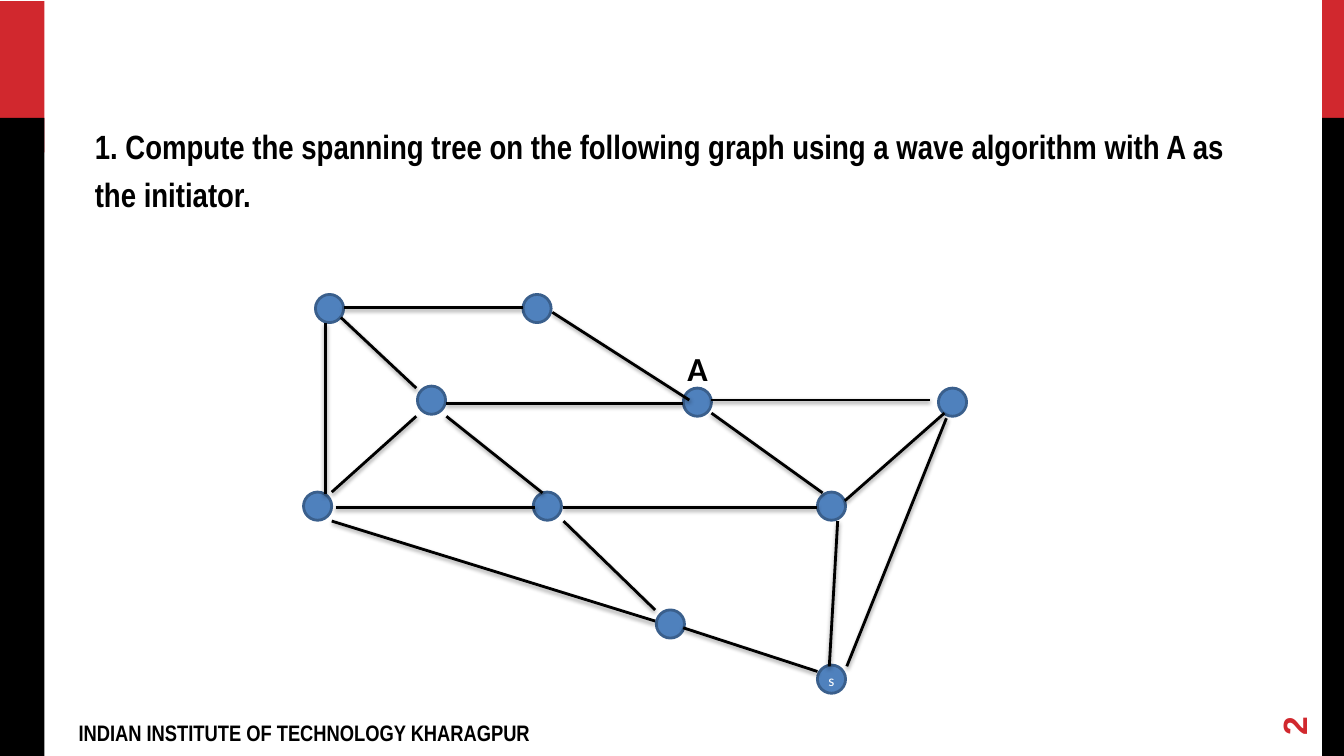
from dataclasses import dataclass

from lxml import etree
from pptx import Presentation
from pptx import util as u
from pptx.dml.color import RGBColor
from pptx.enum import shapes, text
from pptx.oxml import ns

BLACK, RED, WHITE = "000000", "D1282E", "FFFFFF"
NODE_FILL, NODE_LINE = "4F81BD", "3A5F8C"
NODE_SIZE = 0.71


@dataclass(frozen=True)
class Area:
    left: float
    top: float
    width: float
    height: float

    def lengths(self) -> tuple:
        return tuple(u.Cm(n) for n in (self.left, self.top, self.width, self.height))


@dataclass(frozen=True)
class Band:
    area: Area
    color: str


@dataclass(frozen=True)
class Node:
    left: float
    top: float
    label: str = ""


@dataclass(frozen=True)
class Edge:
    x1: float
    y1: float
    x2: float
    y2: float


@dataclass(frozen=True)
class Style:
    font: str
    size: float
    color: str
    bold: bool = True


BANDS = [
    Band(Area(33.32, 0, 0.55, 3.81), RED),
    Band(Area(33.32, 2.97, 0.55, 16.08), BLACK),
    Band(Area(0, 0.03, 1.12, 3.81), RED),
    Band(Area(0, 2.97, 1.12, 16.08), BLACK),
]

NODES = [
    Node(7.95, 7.42), Node(13.18, 7.42),
    Node(10.52, 9.73), Node(17.22, 9.78), Node(23.65, 9.78),
    Node(7.65, 12.4), Node(13.44, 12.4), Node(20.6, 12.4),
    Node(16.54, 15.37), Node(20.6, 16.76, "s"),
]

EDGES = [
    Edge(8.66, 7.75, 13.18, 7.75),
    Edge(17.93, 10.08, 23.44, 10.08),
    Edge(8.36, 12.4, 10.49, 10.49),
    Edge(17.22, 15.82, 20.6, 16.92),
    Edge(8.59, 8, 10.49, 9.78),
    Edge(14.2, 13.13, 16.51, 15.37),
    Edge(8.46, 12.78, 13.49, 12.78),
    Edge(14.2, 12.78, 20.6, 12.78),
    Edge(17.93, 10.41, 20.73, 12.42),
    Edge(11.25, 10.49, 13.67, 12.42),
    Edge(11.25, 10.16, 17.22, 10.16),
    Edge(13.92, 7.87, 17.37, 10.08),
    Edge(23.85, 10.54, 21.34, 16.79),
    Edge(21.11, 13.13, 20.9, 16.79),
    Edge(23.8, 10.41, 21.29, 12.62),
    Edge(16.51, 15.65, 8.36, 13.13),
    Edge(8.2, 12.45, 8.2, 8.13),
]


def rgb(color: str) -> RGBColor:
    return RGBColor.from_string(color)


def write(shape, words: str, style: Style):
    frame = shape.text_frame
    frame.margin_left = frame.margin_right = u.Cm(0.28)
    frame.margin_top = frame.margin_bottom = u.Cm(0.15)
    frame.auto_size = text.MSO_AUTO_SIZE.NONE
    frame.word_wrap = True
    para = frame.paragraphs[0]
    span = para.add_run()
    span.text = words
    span.font.name = style.font
    span.font.size = u.Pt(style.size)
    span.font.bold = style.bold
    span.font.color.rgb = rgb(style.color)
    return para


def write_label(shape, words: str, style: Style) -> None:
    para = write(shape, words, style)
    para.alignment = text.PP_ALIGN.CENTER
    para.line_spacing = 1.15
    para.space_after = u.Pt(10)
    shape.text_frame.vertical_anchor = text.MSO_ANCHOR.MIDDLE
    shape.text_frame.word_wrap = False


def add_band(page, band: Band) -> None:
    box = page.shapes.add_shape(shapes.MSO_SHAPE.RECTANGLE, *band.area.lengths())
    box.shadow.inherit = False
    box.fill.solid()
    box.fill.fore_color.rgb = rgb(band.color)
    box.line.fill.background()


def add_node(page, node: Node) -> None:
    area = Area(node.left, node.top, NODE_SIZE, NODE_SIZE)
    circle = page.shapes.add_shape(shapes.MSO_SHAPE.OVAL, *area.lengths())
    circle.shadow.inherit = False
    circle.fill.solid()
    circle.fill.fore_color.rgb = rgb(NODE_FILL)
    circle.line.color.rgb = rgb(NODE_LINE)
    circle.line.width = u.Pt(2)
    if node.label:
        write_label(circle, node.label, Style("Calibri", 11, WHITE, False))


def add_edge(page, edge: Edge) -> None:
    ends = (u.Cm(n) for n in (edge.x1, edge.y1, edge.x2, edge.y2))
    line = page.shapes.add_connector(shapes.MSO_CONNECTOR.STRAIGHT, *ends)
    line.line.color.rgb = rgb(BLACK)
    line.line.width = u.Pt(2)
    effects = etree.SubElement(line._element.spPr, ns.qn("a:effectLst"))
    shadow = etree.SubElement(
        effects, ns.qn("a:outerShdw"), blurRad=str(u.Pt(3.1)), dist=str(u.Pt(1.6)),
        dir="5400000", rotWithShape="0")
    tint = etree.SubElement(shadow, ns.qn("a:srgbClr"), val=BLACK)
    etree.SubElement(tint, ns.qn("a:alpha"), val="38000")


def add_question(page) -> None:
    title, body = page.placeholders
    title._element.getparent().remove(title._element)
    body.left, body.top, body.width, body.height = Area(2.11, 2.82, 30.05, 12.83).lengths()
    para = write(
        body,
        "1. Compute the spanning tree on the following graph using a wave algorithm "
        "with A as the initiator.",
        Style("Arial Narrow", 24, BLACK))
    para.alignment = text.PP_ALIGN.LEFT
    para.line_spacing = 1.2
    para.space_after = u.Pt(4.9)
    body.text_frame.vertical_anchor = text.MSO_ANCHOR.TOP


def add_footer(page) -> None:
    footer = page.shapes.add_textbox(*Area(1.7, 17.98, 20.6, 0.84).lengths())
    write(footer, "INDIAN INSTITUTE OF TECHNOLOGY KHARAGPUR", Style("Arial Narrow", 16, BLACK))
    number = page.shapes.add_textbox(*Area(31.62, 17.42, 1.96, 0.84).lengths())
    number.rotation = 270
    write(number, "2", Style("Arial", 24, RED))
    number.text_frame.vertical_anchor = text.MSO_ANCHOR.MIDDLE


def add_initiator(page) -> None:
    ring = page.shapes.add_shape(shapes.MSO_SHAPE.OVAL, *Area(16.36, 8, 2.44, 2.39).lengths())
    ring.shadow.inherit = False
    ring.fill.background()
    ring.line.fill.background()
    write_label(ring, "A", Style("Calibri", 24, BLACK))


def main() -> None:
    deck = Presentation()
    deck.slide_width, deck.slide_height = u.Cm(33.87), u.Cm(19.05)
    page = deck.slides.add_slide(deck.slide_layouts.get_by_name("Section Header"))
    for band in BANDS:
        add_band(page, band)
    add_question(page)
    add_footer(page)
    for node in NODES:
        add_node(page, node)
    for edge in EDGES:
        add_edge(page, edge)
    add_initiator(page)
    deck.save("out.pptx")


if __name__ == "__main__":
    main()
